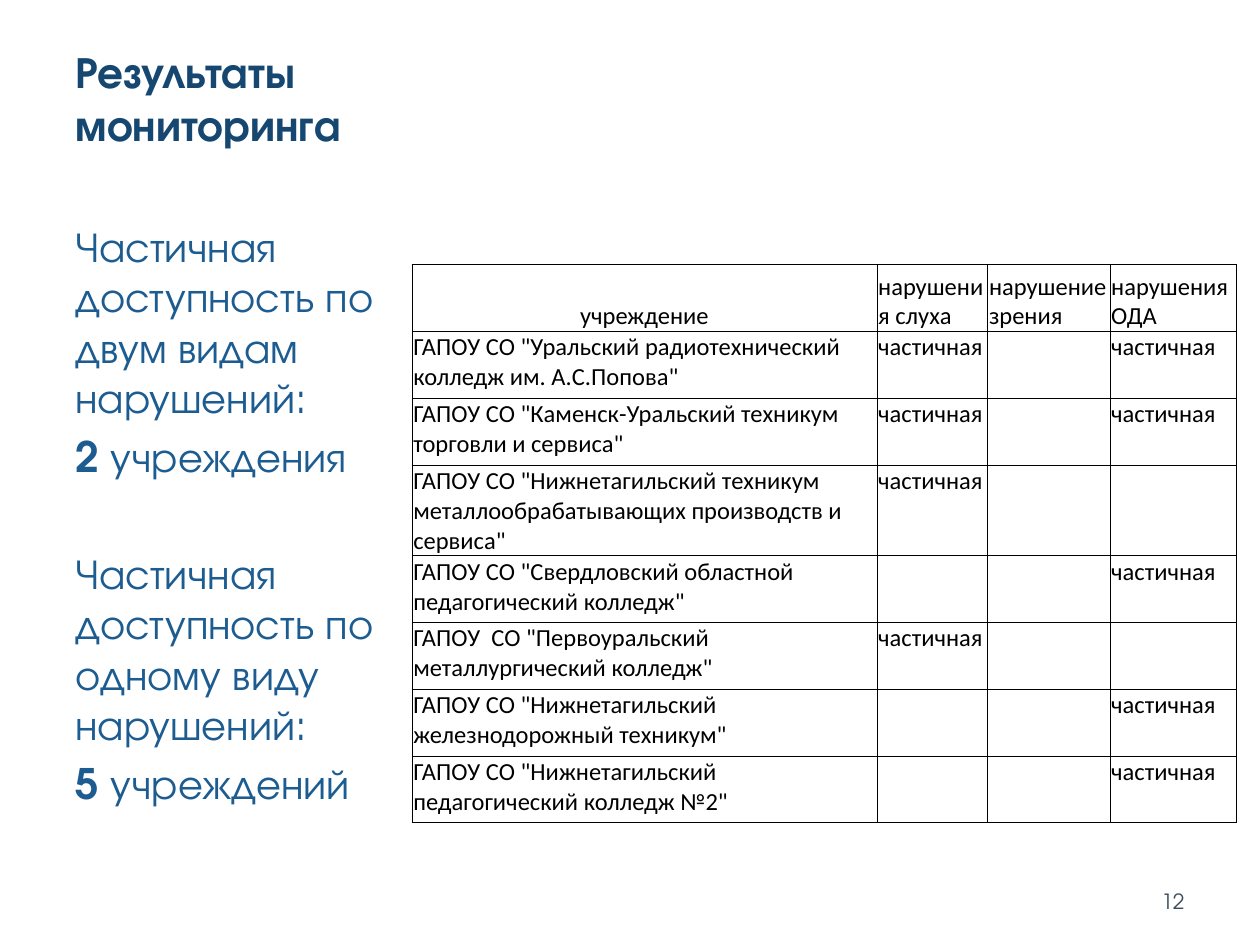
from lxml import etree
from pptx import Presentation
from pptx import util as u
from pptx.dml.color import RGBColor
from pptx.enum import text
from pptx.oxml.ns import qn

PARTIAL = "частичная"
HEADERS = ["учреждение", "нарушения слуха", "нарушение зрения", "нарушения ОДА"]
# Institution, then access for hearing, sight and mobility impairments
ROWS = [
    ['ГАПОУ СО "Уральский радиотехнический колледж им. А.С.Попова"', PARTIAL, "", PARTIAL],
    ['ГАПОУ СО "Каменск-Уральский техникум торговли и сервиса"', PARTIAL, "", PARTIAL],
    ['ГАПОУ СО "Нижнетагильский техникум металлообрабатывающих производств и сервиса"',
     PARTIAL, "", ""],
    ['ГАПОУ СО "Свердловский областной педагогический колледж"', "", "", PARTIAL],
    ['ГАПОУ  СО "Первоуральский металлургический колледж"', PARTIAL, "", ""],
    ['ГАПОУ СО "Нижнетагильский железнодорожный техникум"', "", "", PARTIAL],
    ['ГАПОУ СО "Нижнетагильский педагогический колледж №2"', "", "", PARTIAL],
]
SUMMARY = [
    ("Частичная доступность по двум видам нарушений:", "2", " учреждения"),
    ("Частичная доступность по одному виду нарушений:", "5", " учреждений"),
]


def color(value):
    return RGBColor.from_string(value)


class Deck:
    FONT, TABLE_FONT = "TeX Gyre Adventor", "Calibri"
    TITLE, BODY, NUMBER, BLACK = "164770", "1C5C90", "3A4C5B", "000000"

    def __init__(self, prs):
        self.s = prs.slides.add_slide(prs.slide_layouts[1])

    def place(self, sp, left, top, width, height):
        sp.left, sp.top = u.Inches(left), u.Inches(top)
        sp.width, sp.height = u.Inches(width), u.Inches(height)

    def style(self, r, size, fill, bold=False, font=FONT):
        r.font.name, r.font.size, r.font.bold = font, u.Pt(size), bold
        r.font.color.rgb = color(fill)

    def frame(self, sp, anchor):
        tf = sp.text_frame
        tf.word_wrap = True
        tf.auto_size = text.MSO_AUTO_SIZE.NONE
        tf.vertical_anchor = anchor
        return tf

    def title(self, words, *box):
        sp = self.s.shapes.title
        self.place(sp, *box)
        tf = self.frame(sp, text.MSO_ANCHOR.TOP)
        tf.text = words
        p = tf.paragraphs[0]
        p.alignment = text.PP_ALIGN.LEFT
        self.style(p.runs[0], 25.2, self.TITLE, True)

    def body(self, groups, *box):
        sp = self.s.placeholders[1]
        self.place(sp, *box)
        tf = self.frame(sp, text.MSO_ANCHOR.TOP)
        for i, (label, count, noun) in enumerate(groups):
            p = tf.add_paragraph() if i else tf.paragraphs[0]
            self.body_line(p, 38 if i else 0, [(label, False)])
            self.body_line(tf.add_paragraph(), 4.8, [(count, True), (noun, False)])

    def body_line(self, p, before, parts):
        pPr = p._p.get_or_add_pPr()
        pPr.set("marL", "0")
        pPr.set("indent", "0")
        etree.SubElement(pPr, qn("a:buNone"))
        p.space_before = u.Pt(before)
        for words, bold in parts:
            r = p.add_run()
            r.text = words
            self.style(r, 24, self.BODY, bold)

    def table(self, rows, widths, row_height, left, top):
        frame = self.s.shapes.add_table(
            len(rows), len(widths), u.Inches(left), u.Inches(top),
            u.Inches(sum(widths)), u.Inches(row_height * len(rows)))
        table = frame.table
        table.first_row = table.horz_banding = False
        for column, width in zip(table.columns, widths):
            column.width = u.Inches(width)
        for i, row in enumerate(rows):
            for j, words in enumerate(row):
                self.cell(table.cell(i, j), words, i == 0)
        header = table.cell(0, 0).text_frame.paragraphs[0]
        header.alignment = text.PP_ALIGN.CENTER

    def cell(self, cell, words, is_header):
        cell.margin_left = cell.margin_right = cell.margin_top = u.Inches(0.01)
        cell.margin_bottom = 0
        cell.vertical_anchor = text.MSO_ANCHOR.BOTTOM if is_header else text.MSO_ANCHOR.TOP
        if words:
            cell.text_frame.text = words
            r = cell.text_frame.paragraphs[0].runs[0]
            self.style(r, 14, self.BLACK, font=self.TABLE_FONT)
        # Borders come before the fill in the cell properties
        tcPr = cell._tc.get_or_add_tcPr()
        for side in ("lnL", "lnR", "lnT", "lnB"):
            ln = etree.SubElement(tcPr, qn("a:" + side), w=str(u.Pt(0.5)))
            fill = etree.SubElement(ln, qn("a:solidFill"))
            etree.SubElement(fill, qn("a:srgbClr"), val=self.BLACK)
        cell.fill.background()

    def number(self, words, *box):
        sp = self.s.shapes.add_textbox(*map(u.Inches, box))
        tf = self.frame(sp, text.MSO_ANCHOR.MIDDLE)
        tf.text = words
        p = tf.paragraphs[0]
        p.alignment = text.PP_ALIGN.RIGHT
        self.style(p.runs[0], 12, self.NUMBER)


def main():
    prs = Presentation()
    prs.slide_width, prs.slide_height = u.Inches(10), u.Inches(7.5)
    deck = Deck(prs)

    # Left column: heading and summary
    deck.title("Результаты мониторинга", 0.5, 0.3, 3.29, 1.27)
    deck.body(SUMMARY, 0.5, 1.7, 3.29, 5)

    # Right: accessibility by institution
    deck.table([HEADERS] + ROWS, [3.69, 0.88, 0.97, 1], 0.53, 3.27, 2.1)

    # Slide number
    deck.number("12", 7.17, 6.95, 2.33, 0.4)
    prs.save("out.pptx")


if __name__ == "__main__":
    main()
